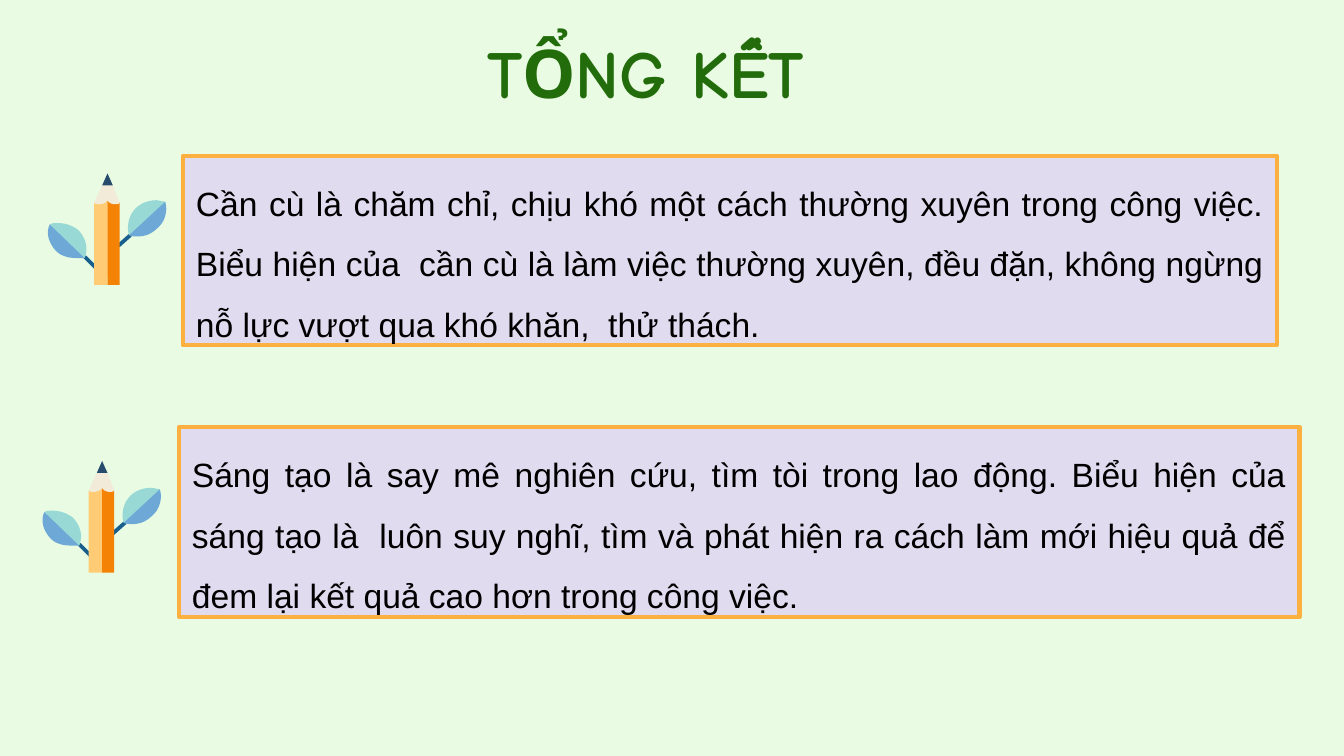
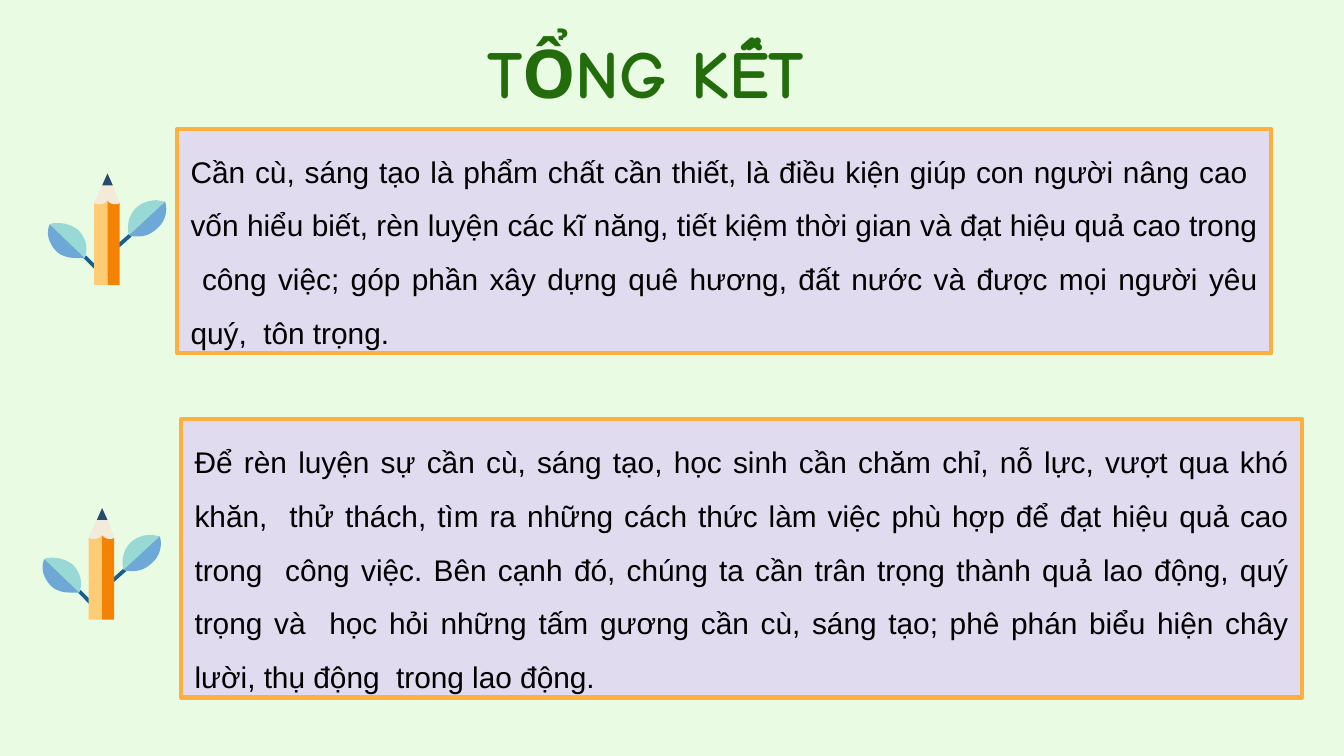
import pptx
import pptx.dml.color
import pptx.enum.shapes
import pptx.enum.text
import pptx.util

COLOURS = {
    "background": "E9FCE3",
    "title": "236C0C",
    "text": "000000",
    "panel": "E0DBEE",
    "border": "FBB040",
    "stem": "185F8D",
    "leaf_shade": "6DA8D6",
    "leaf_light": "98D9D5",
    "body_light": "FFCC75",
    "body_dark": "F48205",
    "tip": "274B6D",
    "wood": "F2EBD9",
}

TITLE = "TỔNG KẾT"
TITLE_FONT = {"name": "Comic Neue", "size": pptx.util.Pt(36), "bold": True}
TITLE_PARAGRAPH = {"alignment": pptx.enum.text.PP_ALIGN.CENTER}
LESSON_PARAGRAPH = {"alignment": pptx.enum.text.PP_ALIGN.JUSTIFY, "line_spacing": 1.5}
FRAME = {
    "word_wrap": True,
    "auto_size": pptx.enum.text.MSO_AUTO_SIZE.SHAPE_TO_FIT_TEXT,
    "vertical_anchor": pptx.enum.text.MSO_ANCHOR.TOP,
}

PENCIL_PARTS = [
    ("stem", [(30, 61), (28, 63), (37, 72), (39, 70)]),
    ("stem", [(62, 45), (53, 53), (55, 55), (64, 47)]),
    ("leaf_shade", [(89, 21), (70, 34), (62, 46), (64, 47, 66, 47, 69, 47),
                    (74, 47, 79, 45, 83, 41), (89, 36, 91, 28, 89, 21)]),
    ("body_light", [(48, 18), (36, 22), (36, 83), (46, 83)]),
    ("body_dark", [(46, 18), (46, 83), (55, 83), (55, 22)]),
    ("tip", [(46, 0), (42, 9), (46, 11), (50, 9)]),
    ("wood", [(42, 9), (36, 22), (37, 23, 38, 23, 40, 23), (42, 23, 45, 22, 46, 20),
              (47, 22, 49, 23, 52, 23), (53, 23, 54, 23, 55, 22), (50, 9)]),
    ("leaf_light", [(82, 20), (77, 20, 71, 22, 67, 26), (62, 31, 60, 39, 62, 46),
                    (89, 21), (87, 21, 84, 20, 82, 20)]),
    ("leaf_shade", [(3, 38), (0, 44, 2, 52, 8, 58), (12, 62, 18, 63, 23, 63),
                    (25, 63, 27, 63, 29, 63), (16, 45)]),
    ("leaf_light", [(9, 37), (7, 37, 5, 37, 3, 38), (29, 63), (32, 56, 30, 48, 24, 42),
                    (20, 39, 15, 37, 9, 37)]),
]
CURVE_STEPS = 8

SUMMARIES = [
    {"size": 18, "lessons": [
        ((13.6, 11.6, 81.4, 14.1), (3.4, 12.9),
         "Cần cù là chăm chỉ, chịu khó một cách thường xuyên trong công việc. "
         "Biểu hiện của  cần cù là làm việc thường xuyên, đều đặn, không ngừng "
         "nỗ lực vượt qua khó khăn,  thử thách. "),
        ((13.3, 31.8, 83.4, 14.1), (3, 34.3),
         "Sáng tạo là say mê nghiên cứu, tìm tòi trong lao động. Biểu hiện của "
         "sáng tạo là  luôn suy nghĩ, tìm và phát hiện ra cách làm mới hiệu quả để "
         "đem lại kết quả cao hơn trong công việc. "),
    ]},
    {"size": 16, "lessons": [
        ((13.2, 9.6, 81.4, 16.7), (3.4, 12.9),
         "Cần cù, sáng tạo là phẩm chất cần thiết, là điều kiện giúp con người nâng cao  "
         "vốn hiểu biết, rèn luyện các kĩ năng, tiết kiệm thời gian và đạt hiệu quả cao trong  "
         "công việc; góp phần xây dựng quê hương, đất nước và được mọi người yêu "
         "quý,  tôn trọng. "),
        ((13.5, 31.2, 83.4, 20.7), (3, 37.8),
         "Để rèn luyện sự cần cù, sáng tạo, học sinh cần chăm chỉ, nỗ lực, vượt qua khó "
         "khăn,  thử thách, tìm ra những cách thức làm việc phù hợp để đạt hiệu quả cao "
         "trong  công việc. Bên cạnh đó, chúng ta cần trân trọng thành quả lao động, quý "
         "trọng và  học hỏi những tấm gương cần cù, sáng tạo; phê phán biểu hiện chây "
         "lười, thụ động  trong lao động. "),
    ]},
]


def rgb(role):
    return pptx.dml.color.RGBColor.from_string(COLOURS[role])


def write(shape, box, text, colour, font, paragraph):
    for side, cells in zip(("left", "top", "width", "height"), box):
        setattr(shape, side, int(cells * cell))
    frame = shape.text_frame
    frame.text = text
    line = frame.paragraphs[0]
    letters = line.runs[0].font
    letters.color.rgb = rgb(colour)
    for target, values in ((frame, FRAME), (line, paragraph), (letters, font)):
        for key, value in values.items():
            setattr(target, key, value)


deck = pptx.Presentation()
deck.slide_width = pptx.util.Inches(10)
deck.slide_height = deck.slide_width * 9 // 16
cell = deck.slide_width / 100

backdrop = deck.slide_master.background.fill
backdrop.solid()
backdrop.fore_color.rgb = rgb("background")

for summary in SUMMARIES:
    slide = deck.slides.add_slide(deck.slide_layouts[5])
    write(slide.shapes.title, (34.1, 1.8, 27.9, 7.1), TITLE, "title", TITLE_FONT, TITLE_PARAGRAPH)
    lesson_font = {"name": "Arial", "size": pptx.util.Pt(summary["size"])}

    for box, pencil_corner, text in summary["lessons"]:
        panel = slide.shapes.add_shape(pptx.enum.shapes.MSO_SHAPE.RECTANGLE, 0, 0, 0, 0)
        panel.shadow.inherit = False
        panel.fill.solid()
        panel.fill.fore_color.rgb = rgb("panel")
        panel.line.color.rgb = rgb("border")
        panel.line.width = pptx.util.Pt(2.25)
        write(panel, box, text, "text", lesson_font, LESSON_PARAGRAPH)

        pencil = slide.shapes.add_group_shape()
        for colour, steps in PENCIL_PARTS:
            outline = []
            for step in steps:
                if len(step) == 2:
                    outline.append(step)
                    continue
                controls = [outline[-1], step[:2], step[2:4], step[4:]]
                for i in range(1, CURVE_STEPS + 1):
                    t = i / CURVE_STEPS
                    weights = ((1 - t) ** 3, 3 * t * (1 - t) ** 2, 3 * t * t * (1 - t), t ** 3)
                    outline.append(tuple(sum(w * point[axis] for w, point in zip(weights, controls))
                                         for axis in (0, 1)))
            fine = [(x * 10, y * 10) for x, y in outline]
            builder = pencil.shapes.build_freeform(*fine[0], scale=cell / 100)
            builder.add_line_segments(fine[1:], close=True)
            part = builder.convert_to_shape(*(int(place * cell) for place in pencil_corner))
            part.shadow.inherit = False
            part.fill.solid()
            part.fill.fore_color.rgb = rgb(colour)
            part.line.fill.background()

deck.save("out.pptx")
